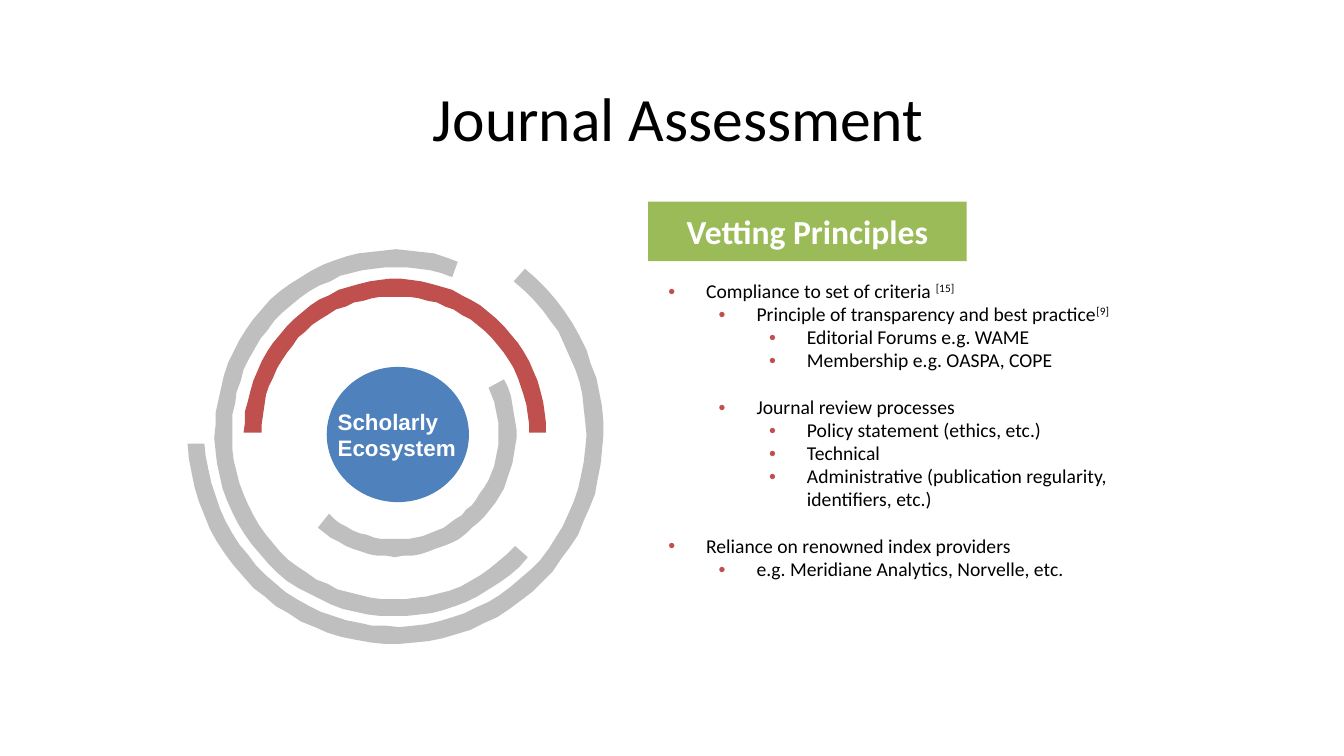
from dataclasses import dataclass
from math import cos, radians, sin

from lxml import etree
from pptx import Presentation
from pptx.dml.color import RGBColor
from pptx.enum import shapes, text
from pptx.oxml import ns
from pptx.util import Pt

HUES = {"ink": "000000", "white": "FFFFFF", "grey": "BFBFBF",
        "red": "C0504D", "blue": "4F81BD", "green": "9BBB59"}
HUB = (282.4, 309.4)
BAND = 12.2
FLAT = 2  # vertical radius less horizontal radius


@dataclass
class Arc:
    """Ring segment; angles in degrees run clockwise from the right."""
    radius: float
    start: float
    end: float
    hue: str = "grey"


@dataclass
class Point:
    level: int
    words: str
    note: str = ""
    gap: float = 0


@dataclass
class Style:
    size: float
    hue: str
    face: str = "Calibri"
    bold: bool = False


ARCS = [
    Arc(86.2, -25.5, 130.3),
    Arc(108, 180, 360, "red"),
    Arc(129, 42.8, 290.3),
    Arc(148.4, -51.4, 177),
]
POINTS = [
    Point(0, "Compliance to set of criteria ", "[15]"),
    Point(1, "Principle of transparency and best practice", "[9]"),
    Point(2, "Editorial Forums e.g. WAME"),
    Point(2, "Membership e.g. OASPA, COPE"),
    Point(1, "Journal review processes", gap=16.8),
    Point(2, "Policy statement (ethics, etc.)"),
    Point(2, "Technical"),
    Point(2, "Administrative (publication regularity, identifiers, etc.)"),
    Point(0, "Reliance on renowned index providers", gap=16.8),
    Point(1, "e.g. Meridiane Analytics, Norvelle, etc."),
]
TITLE = Style(44, "ink")
HEAD = Style(24, "white", bold=True)
CORE = Style(16, "white", "Arial", True)
BODY = Style(14, "ink")


def tint(hue: str) -> RGBColor:
    return RGBColor.from_string(HUES[hue])


def paint(shape, hue: str) -> None:
    shape.shadow.inherit = False
    shape.fill.solid()
    shape.fill.fore_color.rgb = tint(hue)
    shape.line.fill.background()


def style(font, look: Style) -> None:
    for name, value in {"size": Pt(look.size), "name": look.face,
                        "bold": look.bold}.items():
        setattr(font, name, value)
    font.color.rgb = tint(look.hue)


def frame(shape, pads: tuple, anchor):
    """Set wrapping, anchor and left, top, right, bottom margins."""
    body = shape.text_frame
    sides = ("left", "top", "right", "bottom")
    rules = {f"margin_{side}": Pt(pad) for side, pad in zip(sides, pads)}
    rules |= {"word_wrap": True, "vertical_anchor": anchor}
    for name, value in rules.items():
        setattr(body, name, value)
    return body


def label(shape, words: str, look: Style, pads: tuple, align) -> None:
    body = frame(shape, pads, text.MSO_ANCHOR.MIDDLE)
    line = body.paragraphs[0]
    line.alignment = align
    run = line.add_run()
    run.text = words
    style(run.font, look)


def sweep(arc: Arc, inset: float) -> list:
    """Points along one edge of the ring segment."""
    count = round((arc.end - arc.start) / 4)
    turns = [radians(arc.start + (arc.end - arc.start) * i / count)
             for i in range(count + 1)]
    wide = arc.radius - inset
    return [(HUB[0] + wide * cos(t), HUB[1] + (wide + FLAT) * sin(t))
            for t in turns]


def ring(slide, arc: Arc) -> None:
    edge = sweep(arc, 0) + sweep(arc, BAND)[::-1]
    pen = slide.shapes.build_freeform(*edge[0], scale=float(Pt(1)))
    pen.add_line_segments(edge[1:], close=True)
    paint(pen.convert_to_shape(), arc.hue)


def bullet(line, level: int) -> None:
    line.level = level
    props = line._p.get_or_add_pPr()
    props.set("marL", str(Pt(27 + 36 * level)))
    props.set("indent", str(Pt(-27)))
    color = etree.SubElement(props, ns.qn("a:buClr"))
    etree.SubElement(color, ns.qn("a:srgbClr"), val=HUES["red"])
    etree.SubElement(props, ns.qn("a:buFont"), typeface="Arial")
    etree.SubElement(props, ns.qn("a:buChar"), char="•")


def outline(slide) -> None:
    box = slide.shapes.add_textbox(Pt(463), Pt(185.8), Pt(396), Pt(303.8))
    body = frame(box, (14.4,) * 4, text.MSO_ANCHOR.TOP)
    for i, point in enumerate(POINTS):
        line = body.add_paragraph() if i else body.paragraphs[0]
        bullet(line, point.level)
        line.line_spacing = 0.98
        if point.gap:
            line.space_before = Pt(point.gap)
        for words, base in ((point.words, 0), (point.note, 30000)):
            if words:
                run = line.add_run()
                run.text = words
                style(run.font, BODY)
                if base:
                    run._r.get_or_add_rPr().set("baseline", str(base))


def main() -> None:
    deck = Presentation()
    deck.slide_width, deck.slide_height = Pt(960), Pt(540)
    slide = deck.slides.add_slide(deck.slide_layouts[6])
    kinds, align = shapes.MSO_SHAPE, text.PP_ALIGN

    outline(slide)
    head = slide.shapes.add_shape(
        kinds.RECTANGLE, Pt(463), Pt(144), Pt(227.5), Pt(42.5))
    paint(head, "green")
    label(head, "Vetting Principles", HEAD, (14.4, 7.2, 14.4, 7.2), align.CENTER)

    for arc in ARCS:
        ring(slide, arc)
    core = slide.shapes.add_shape(
        kinds.OVAL, Pt(233.4), Pt(262.1), Pt(101.6), Pt(96.6))
    paint(core, "blue")
    label(core, "Scholarly Ecosystem", CORE, (-7, 3, -10, 3), align.LEFT)

    title = slide.shapes.add_textbox(Pt(75), Pt(31), Pt(819.4), Pt(104.4))
    label(title, "Journal Assessment", TITLE, (7.2, 3.6, 7.2, 3.6), align.CENTER)
    deck.save("out.pptx")


if __name__ == "__main__":
    main()
